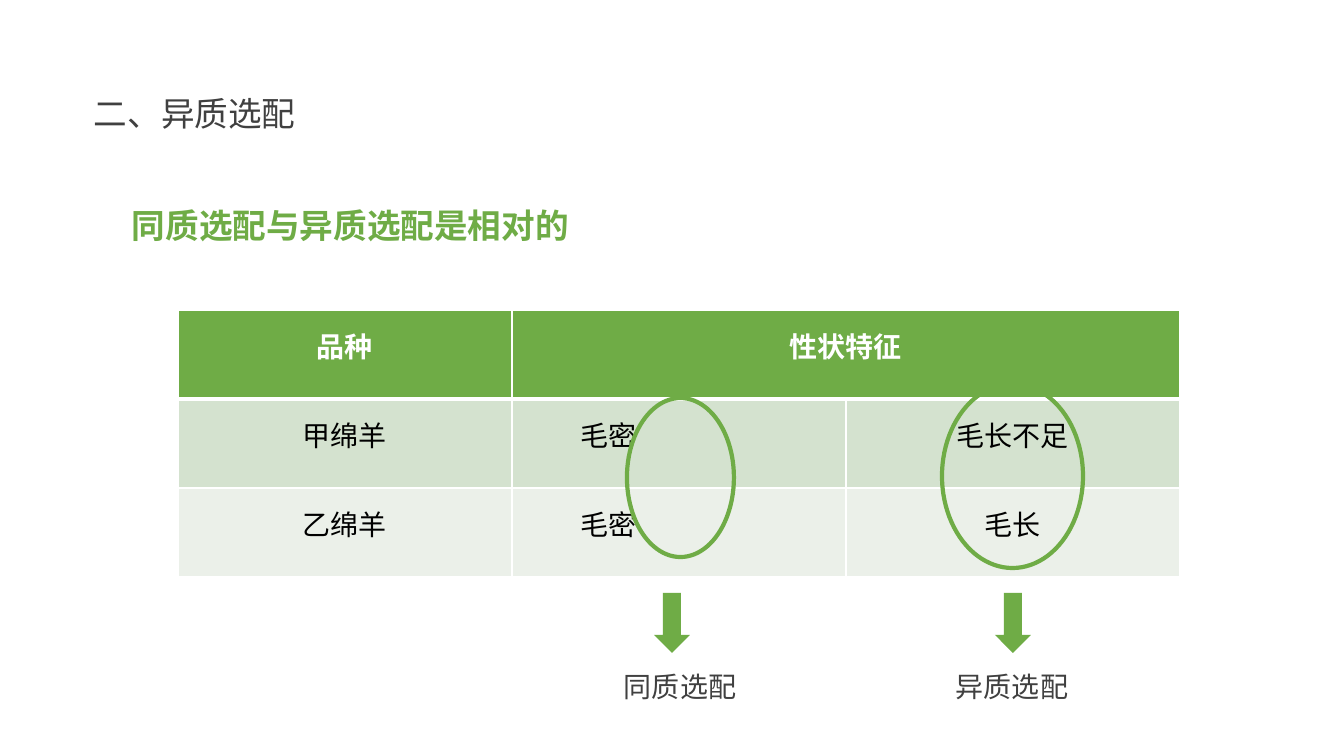
from lxml.etree import SubElement
from pptx import Presentation
from pptx.dml.color import RGBColor
from pptx.enum.shapes import MSO_SHAPE
from pptx.enum.text import MSO_ANCHOR, MSO_AUTO_SIZE, PP_ALIGN
from pptx.oxml.ns import qn
from pptx.util import Pt

COLORS = {
    "green": "6FAC46",
    "band_dark": "D4E2CF",
    "band_light": "EBF0E9",
    "white": "FFFFFF",
    "black": "000000",
    "grey": "404040",
}
FONT = "Noto Sans CJK SC"
SLIDE_W, SLIDE_H = 1344, 756
SCALE = 12192000 / SLIDE_W

TITLE = ("二、异质选配", (93, 40, 1159, 146))
CLAIM = ("同质选配与异质选配是相对的", (131, 204, 522, 42))
BREEDS = [
    ("品种", "性状特征", ""),
    ("甲绵羊", "毛密", "毛长不足"),
    ("乙绵羊", "毛密", "毛长"),
]
ROW_FILLS = ["green", "band_dark", "band_light"]
TABLE_LEFT, TABLE_TOP = 178, 310
COL_W, ROW_H = 334, 89
DENSITY_COL, DENSITY_RIGHT_MARGIN = 1, 140
MATINGS = [
    {"label": "同质选配", "label_left": 623, "arrow_center": 672, "ring": (627, 398, 107, 159)},
    {"label": "异质选配", "label_left": 955, "arrow_center": 1013, "ring": (942, 384, 141, 184)},
]
ARROW_TOP, ARROW_W, ARROW_H = 593, 36, 60
LABEL_TOP, LABEL_W, LABEL_H = 668, 115, 36


def px(length):
    return round(length * SCALE)


def box(lengths):
    return [px(length) for length in lengths]


def rgb(name):
    return RGBColor.from_string(COLORS[name])


def write(frame, text, size, color, bold=False, align=PP_ALIGN.LEFT):
    paragraph = frame.paragraphs[0]
    paragraph.alignment = align
    paragraph.space_before = Pt(0)
    run = paragraph.add_run()
    run.text = text
    run.font.size = Pt(size)
    run.font.bold = bold
    run.font.color.rgb = rgb(color)
    run.font.name = FONT
    SubElement(run.font._element, qn("a:ea"), typeface=FONT)


def write_box(shape, text, size, color, bold=False, anchor=MSO_ANCHOR.TOP):
    frame = shape.text_frame
    frame.word_wrap = True
    frame.auto_size = MSO_AUTO_SIZE.NONE
    frame.vertical_anchor = anchor
    frame.margin_left = frame.margin_top = px(1)
    frame.margin_right = frame.margin_bottom = 0
    write(frame, text, size, color, bold)


def set_borders(cell, widths):
    properties = cell._tc.get_or_add_tcPr()
    for side, width in widths.items():
        line = SubElement(properties, qn(f"a:ln{side}"), w=str(Pt(width)))
        fill = SubElement(line, qn("a:solidFill"))
        SubElement(fill, qn("a:srgbClr"), val=COLORS["white"])


def add_breed_table(slide):
    rows, cols = len(BREEDS), len(BREEDS[0])
    frame = slide.shapes.add_table(
        rows, cols, *box((TABLE_LEFT, TABLE_TOP, cols * COL_W, rows * ROW_H)))
    table = frame.table
    for column in table.columns:
        column.width = px(COL_W)
    for row in table.rows:
        row.height = px(ROW_H)
    table.cell(0, 1).merge(table.cell(0, 2))
    for r, traits in enumerate(BREEDS):
        header = r == 0
        for c, trait in enumerate(traits):
            cell = table.cell(r, c)
            set_borders(cell, {"L": 1, "R": 1, "T": 3 if r == 1 else 1, "B": 3 if header else 1})
            cell.fill.solid()
            cell.fill.fore_color.rgb = rgb(ROW_FILLS[r])
            cell.margin_left = cell.margin_right = cell.margin_bottom = 0
            cell.margin_top = px(15)
            if c == DENSITY_COL and not header:
                cell.margin_right = px(DENSITY_RIGHT_MARGIN)
            if trait:
                write(cell.text_frame, trait, 20, "white" if header else "black",
                      header, PP_ALIGN.CENTER)


def add_mating(slide, mating):
    ring = slide.shapes.add_shape(MSO_SHAPE.OVAL, *box(mating["ring"]))
    ring.shadow.inherit = False
    ring.fill.background()
    ring.line.color.rgb = rgb("green")
    ring.line.width = Pt(3)

    arrow = slide.shapes.add_shape(MSO_SHAPE.DOWN_ARROW, *box(
        (mating["arrow_center"] - ARROW_W / 2, ARROW_TOP, ARROW_W, ARROW_H)))
    arrow.shadow.inherit = False
    arrow.fill.solid()
    arrow.fill.fore_color.rgb = rgb("green")
    arrow.line.fill.background()

    label = slide.shapes.add_textbox(*box((mating["label_left"], LABEL_TOP, LABEL_W, LABEL_H)))
    write_box(label, mating["label"], 20, "grey")


def main():
    deck = Presentation()
    deck.slide_width, deck.slide_height = px(SLIDE_W), px(SLIDE_H)
    slide = deck.slides.add_slide(deck.slide_layouts[5])

    title_text, title_box = TITLE
    title = slide.shapes.title
    title.left, title.top, title.width, title.height = box(title_box)
    write_box(title, title_text, 24, "grey", anchor=MSO_ANCHOR.MIDDLE)

    claim_text, claim_box = CLAIM
    claim = slide.shapes.add_textbox(*box(claim_box))
    write_box(claim, claim_text, 24, "green", bold=True)

    add_breed_table(slide)
    for mating in MATINGS:
        add_mating(slide, mating)
    deck.save("out.pptx")


if __name__ == "__main__":
    main()
